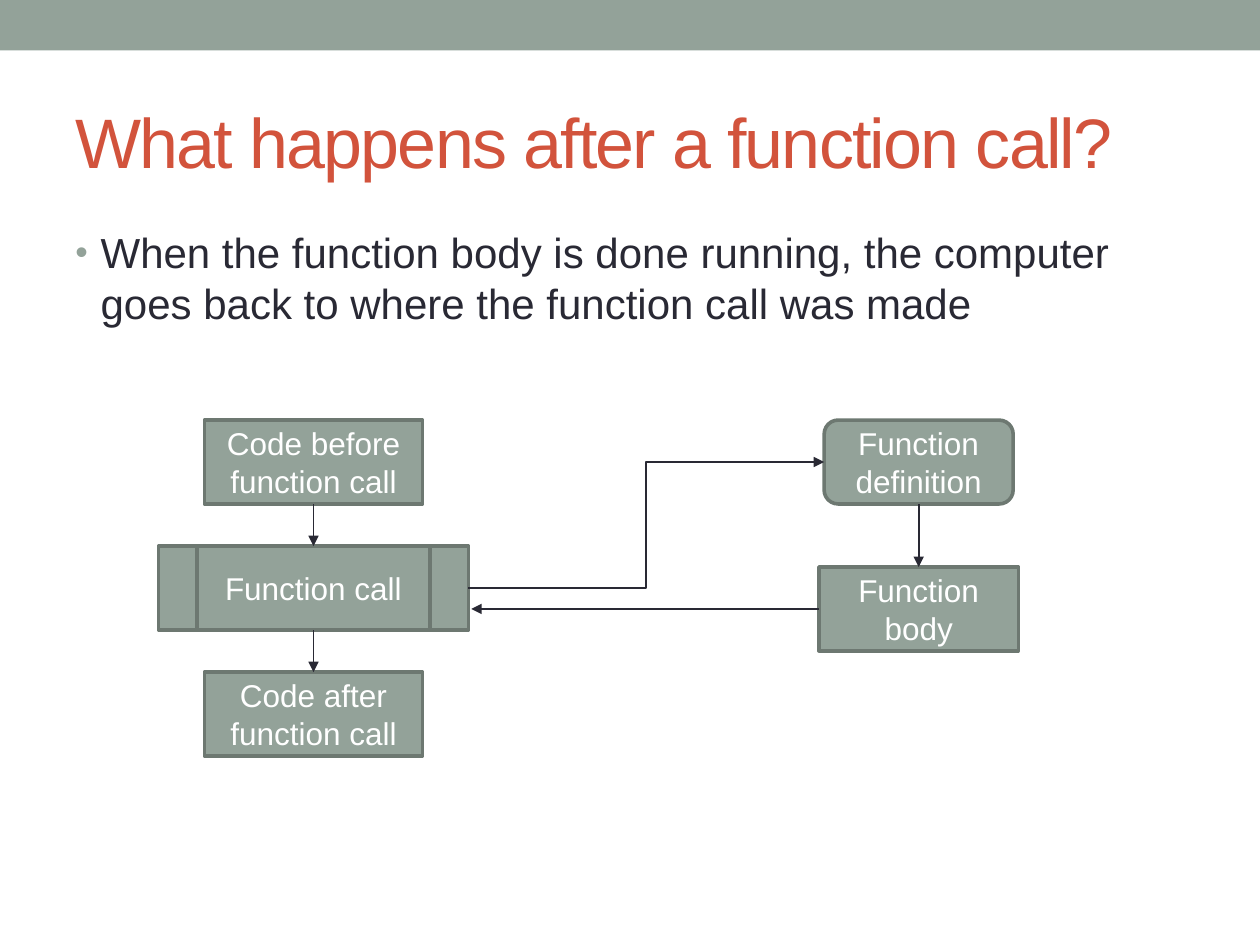
import pptx
import pptx.util
import pptx.dml.color
import pptx.enum.shapes
import pptx.enum.text
import lxml.etree

Cm, Pt = pptx.util.Cm, pptx.util.Pt
RGB = pptx.dml.color.RGBColor.from_string
Kind = pptx.enum.shapes.MSO_SHAPE
Link = pptx.enum.shapes.MSO_CONNECTOR
Anchor = pptx.enum.text.MSO_ANCHOR
Align = pptx.enum.text.PP_ALIGN
qn = pptx.oxml.ns.qn

theme = {
    "font": "Arial",
    "sage": "93A299", "edge": "6D7871", "red": "D2533C", "ink": "292934", "white": "FFFFFF",
    "title": 40, "body": 24, "label": 18,
}


def write(shape, text, size, color, anchor, align):
    """Put one styled paragraph in a shape and return it."""
    frame = shape.text_frame
    para = frame.paragraphs[0]
    run = para.add_run()
    run.text = text
    formats = [
        (frame, {"word_wrap": True, "vertical_anchor": anchor}),
        (para, {"alignment": align}),
        (run.font, {"name": theme["font"], "size": Pt(theme[size])}),
    ]
    for item, values in formats:
        for name, value in values.items():
            setattr(item, name, value)
    run.font.color.rgb = RGB(theme[color])
    return para


def paint(shape):
    """Fill a shape with the main colour and drop its shadow."""
    shape.shadow.inherit = False
    shape.fill.solid()
    shape.fill.fore_color.rgb = RGB(theme["sage"])


deck = pptx.Presentation()
deck.slide_width, deck.slide_height = Cm(25.4), Cm(19.05)
slide = deck.slides.add_slide(deck.slide_layouts[6])
shapes = slide.shapes

# Top band
band = shapes.add_shape(Kind.RECTANGLE, 0, 0, deck.slide_width, Cm(1.02))
paint(band)
band.line.fill.background()

# Title
title = shapes.add_textbox(Cm(1.27), Cm(1.47), Cm(22.86), Cm(2.74))
para = write(title, "What happens after a function call?", "title", "red", Anchor.MIDDLE, Align.LEFT)
para.runs[0].font._element.set("spc", "-100")

# Bullet text
body = shapes.add_textbox(Cm(1.27), Cm(4.45), Cm(22.86), Cm(13.54))
para = write(body, "When the function body is done running, the computer goes back to "
             "where the function call was made", "body", "ink", Anchor.TOP, Align.LEFT)
para.space_before = Pt(4.8)
props = para._p.get_or_add_pPr()
props.set("marL", str(Cm(0.51)))
props.set("indent", str(-Cm(0.51)))
tint = lxml.etree.SubElement(props, qn("a:buClr"))
lxml.etree.SubElement(tint, qn("a:srgbClr"), val=theme["sage"])
lxml.etree.SubElement(props, qn("a:buSzPct"), val="85000")
lxml.etree.SubElement(props, qn("a:buFont"), typeface=theme["font"])
lxml.etree.SubElement(props, qn("a:buChar"), char="•")

# Flow boxes: name, text, preset, centre, top, width
left, right = 6.32, 18.52
top, step, high = 8.47, 2.54, 1.69
plan = [
    ("before", "Code before function call", Kind.FLOWCHART_PROCESS, left, top, 4.4),
    ("after", "Code after function call", Kind.FLOWCHART_PROCESS, left, top + 2 * step, 4.4),
    ("call", "Function call", Kind.FLOWCHART_PREDEFINED_PROCESS, left, top + step, 6.25),
    ("body", "Function body", Kind.FLOWCHART_PROCESS, right, 11.43, 4.02),
    ("def", "Function definition", Kind.FLOWCHART_ALTERNATE_PROCESS, right, top, 3.81),
]
boxes = {}
for name, text, kind, mid, y, wide in plan:
    box = shapes.add_shape(kind, Cm(mid - wide / 2), Cm(y), Cm(wide), Cm(high))
    paint(box)
    box.line.color.rgb = RGB(theme["edge"])
    box.line.width = Pt(2.08)
    write(box, text, "label", "white", Anchor.MIDDLE, Align.CENTER)
    boxes[name] = box

# Arrows between connection sites; the return arrow ends freely beside the call
TOP, LEFT, BOTTOM, RIGHT = range(4)
links = [
    (Link.STRAIGHT, "before", BOTTOM, "call", TOP),
    (Link.STRAIGHT, "call", BOTTOM, "after", TOP),
    (Link.ELBOW, "call", RIGHT, "def", LEFT),
    (Link.STRAIGHT, "def", BOTTOM, "body", TOP),
    (Link.STRAIGHT, "body", LEFT, None, None),
]
for kind, start, out, goal, into in links:
    wire = shapes.add_connector(kind, 0, 0, 0, 0)
    wire.begin_connect(boxes[start], out)
    if goal:
        wire.end_connect(boxes[goal], into)
    else:
        wire.end_x, wire.end_y = Cm(9.5), wire.begin_y
    wire.line.color.rgb = RGB(theme["ink"])
    wire.line.width = Pt(1)
    lxml.etree.SubElement(wire.line._get_or_add_ln(), qn("a:tailEnd"), type="triangle")
    lxml.etree.SubElement(wire._element.spPr, qn("a:effectLst"))

deck.save("out.pptx")
